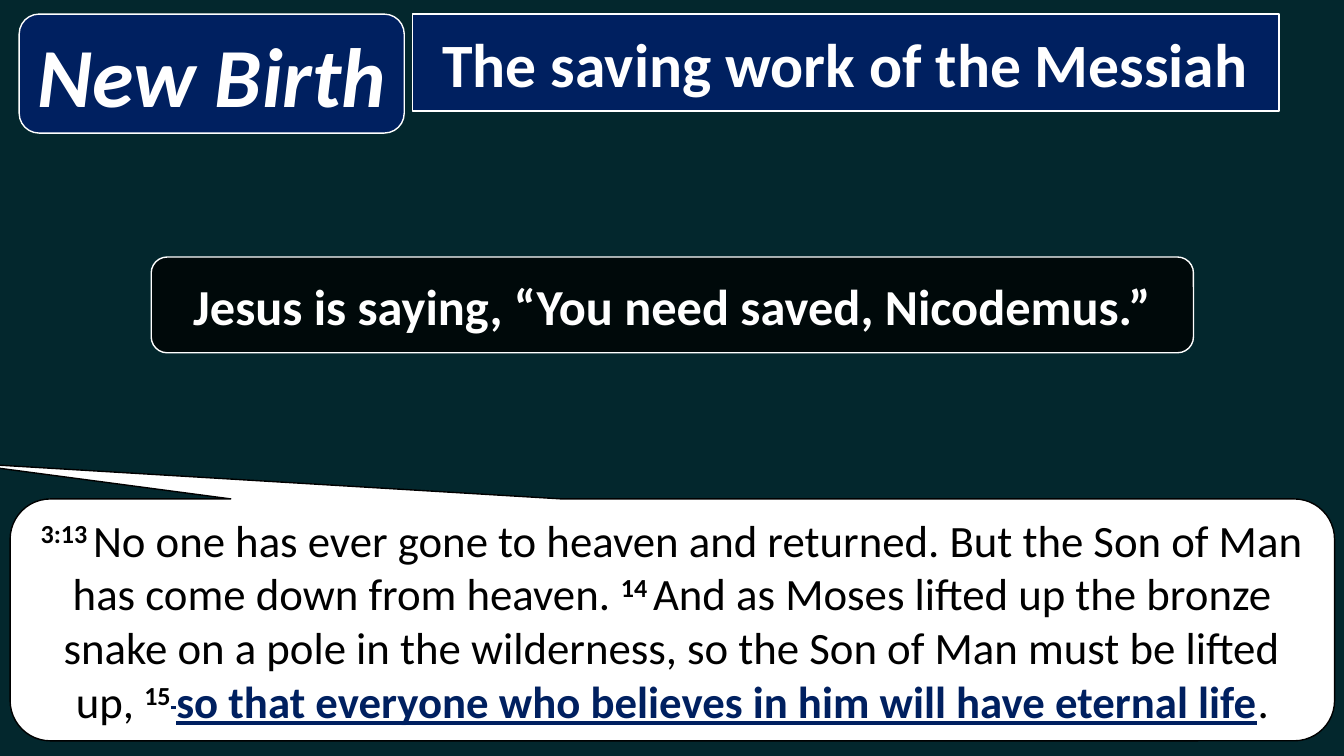
from lxml.etree import SubElement
from pptx import Presentation
from pptx.dml.color import RGBColor
from pptx.enum.shapes import MSO_SHAPE as Shape
from pptx.enum.text import MSO_ANCHOR as Anchor, MSO_AUTO_SIZE as AutoSize, PP_ALIGN as Align
from pptx.oxml import parse_xml
from pptx.oxml.ns import nsdecls, qn
from pptx.util import Inches, Pt

NAVY, WHITE, BLACK, TEAL = "002060", "FFFFFF", "000000", "03272D"


def rgb(value):
    """Turn a hex string into a colour."""
    return RGBColor.from_string(value)


def add_text(p, text, size=32, color=WHITE, bold=False, italic=False,
             underline=False, raised=False, font="Calibri"):
    """Add one formatted run to a paragraph."""
    r = p.add_run()
    r.text = text
    f = r.font
    f.name, f.size, f.bold, f.italic = font, Pt(size), bold, italic
    f.underline = underline
    f.color.rgb = rgb(color)
    if raised:
        f._element.set("baseline", "30000")


class Deck:
    """Hold the style and the current slide; lengths are percent of the slide."""

    def __init__(self, background):
        """Start a widescreen slide with a plain background."""
        self.prs = Presentation()
        self.prs.slide_width, self.prs.slide_height = Inches(13.33), Inches(7.5)
        self.s = self.prs.slides.add_slide(self.prs.slide_layouts[5])
        fill = self.s.background.fill
        fill.solid()
        fill.fore_color.rgb = rgb(background)

    def box(self, x, y, w, h):
        """Convert percent of the slide into lengths."""
        width, height = self.prs.slide_width, self.prs.slide_height
        return [int(share * side / 100) for share, side in
                zip((x, y, w, h), (width, height, width, height))]

    def style(self, sp, runs, fill, line, alpha=None):
        """Apply fill, outline and centred text to a shape."""
        sp.shadow.inherit = False
        sp.fill.solid()
        sp.fill.fore_color.rgb = rgb(fill)
        if alpha:
            color = sp.fill._xPr.find(qn("a:solidFill"))[0]
            SubElement(color, qn("a:alpha"), val=str(alpha * 1000))
        sp.line.color.rgb = rgb(line)
        sp.line.width = Pt(1)
        tf = sp.text_frame
        tf.word_wrap, tf.auto_size = True, AutoSize.NONE
        tf.vertical_anchor = Anchor.MIDDLE
        p = tf.paragraphs[0]
        p.alignment = Align.CENTER
        for text, look in runs:
            add_text(p, text, **look)

    def title(self, place, text, fill=NAVY, **look):
        """Place the title as a rounded panel."""
        sp = self.s.shapes.title
        sp.left, sp.top, sp.width, sp.height = self.box(*place)
        sp._element.spPr.insert(1, parse_xml(
            f'<a:prstGeom {nsdecls("a")} prst="roundRect"><a:avLst/></a:prstGeom>'))
        self.style(sp, [(text, look)], fill, WHITE)

    def panel(self, place, text, fill=NAVY, alpha=None, **look):
        """Add a rounded panel with one line of text."""
        sp = self.s.shapes.add_shape(Shape.ROUNDED_RECTANGLE, *self.box(*place))
        self.style(sp, [(text, look)], fill, WHITE, alpha)

    def callout(self, place, runs, tail):
        """Add a rounded speech callout with mixed text."""
        sp = self.s.shapes.add_shape(Shape.ROUNDED_RECTANGULAR_CALLOUT, *self.box(*place))
        sp.adjustments[0], sp.adjustments[1] = tail
        self.style(sp, runs, WHITE, BLACK)


def main():
    """Build and save the slide."""
    deck = Deck(TEAL)
    deck.title((30.67, 1.87, 64.5, 12.8), "The saving work of the Messiah", size=44, bold=True)
    deck.panel((1.43, 1.87, 28.65, 15.73), "New Birth", size=60, bold=True, italic=True)
    deck.panel((11.25, 34, 77.55, 12.67), "Jesus is saying, “You need saved, Nicodemus.”",
               fill=BLACK, alpha=76, size=36, bold=True)
    verse = dict(color=BLACK)
    number = dict(color=BLACK, bold=True, raised=True)
    promise = dict(color=NAVY, bold=True, underline=True)
    deck.callout((0.75, 66, 98.55, 32), [
        ("3:13 ", number),
        ("No one has ever gone to heaven and returned. "
         "But the Son of Man has come down from heaven. ", verse),
        ("14 ", number),
        ("And as Moses lifted up the bronze snake on a pole in the wilderness, "
         "so the Son of Man must be lifted up, ", verse),
        ("15", number),
        (" ", dict(promise, raised=True)),
        ("so that everyone who believes in him will have eternal life", promise),
        (".", verse),
    ], tail=(-0.54, -0.65))
    deck.prs.save("out.pptx")


if __name__ == "__main__":
    main()
